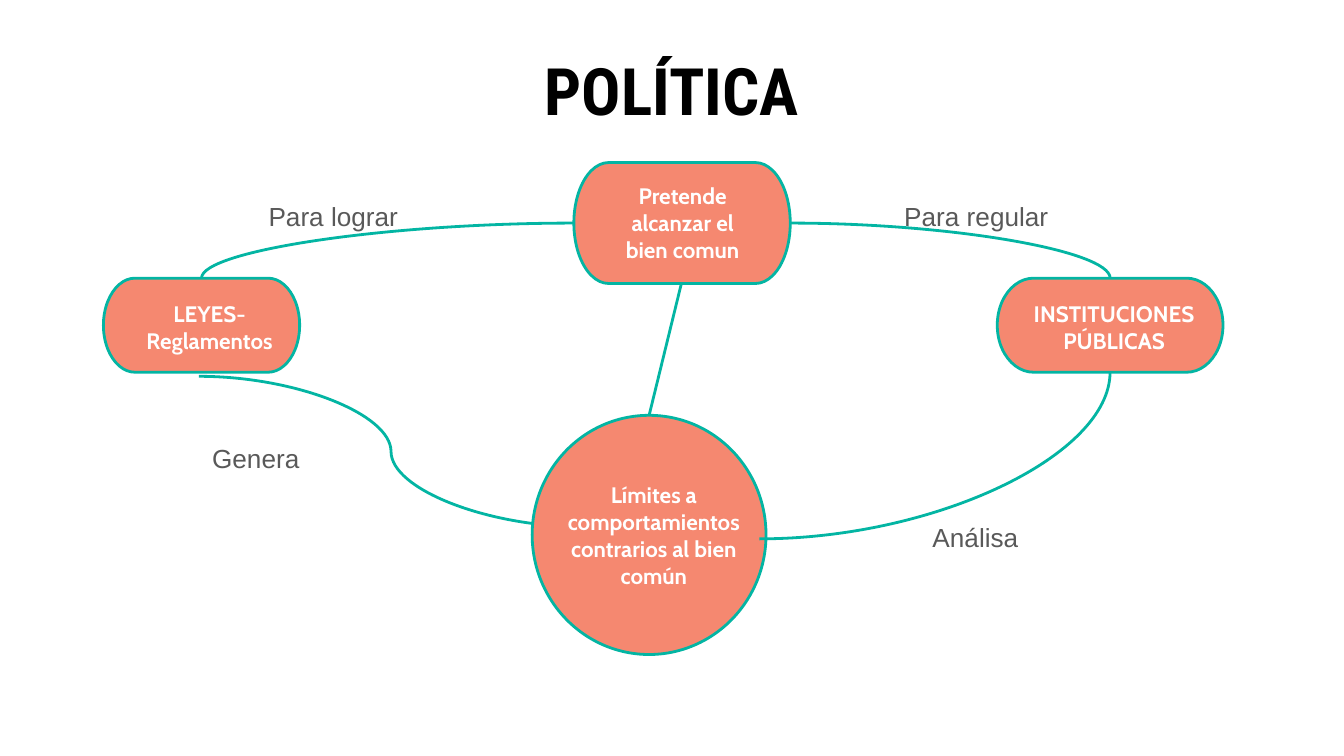
from typing import NamedTuple

from lxml import etree
from pptx import Presentation
from pptx.dml.color import RGBColor
from pptx.enum import shapes, text
from pptx.oxml import ns
from pptx.util import Inches, Pt

TEAL, CORAL, WHITE, BLACK, GRAY = "03B5A3", "F58870", "FFFFFF", "000000", "595959"
PILL = shapes.MSO_SHAPE.FLOWCHART_TERMINATOR
OVAL = shapes.MSO_SHAPE.OVAL
LINE = shapes.MSO_CONNECTOR.STRAIGHT
CURVE = shapes.MSO_CONNECTOR.CURVE


class Box(NamedTuple):
    x: float
    y: float
    w: float
    h: float


class Node(NamedTuple):
    kind: int
    box: Box
    area: Box
    words: str


class Link(NamedTuple):
    kind: int
    x1: float
    y1: float
    x2: float
    y2: float
    bend: bool = False  # a single quarter bend, level at its start


class Font(NamedTuple):
    name: str
    size: float
    color: str
    bold: bool


NODE = Font("Cabin", 12, WHITE, True)
HEAD = Font("Roboto Condensed", 35, BLACK, True)
NOTE = Font("Arial", 14, GRAY, False)

NODES = [
    Node(PILL, Box(4.27, 1.21, 1.61, 0.9), Box(4.46, 1.34, 1.24, 0.63),
         "Pretende alcanzar el bien comun"),
    Node(OVAL, Box(3.96, 3.09, 1.74, 1.78), Box(4.07, 3.55, 1.59, 0.86),
         "Límites a comportamientos contrarios al bien común"),
    Node(PILL, Box(7.42, 2.07, 1.68, 0.7), Box(7.52, 2.23, 1.54, 0.41),
         "INSTITUCIONES PÚBLICAS"),
    Node(PILL, Box(0.77, 2.07, 1.46, 0.7), Box(0.89, 2.23, 1.34, 0.41),
         "LEYES- Reglamentos"),
]
BACK = [
    Link(CURVE, 1.48, 2.8, 4.34, 3.92),
    Link(LINE, 4.83, 3.09, 5.07, 2.11),
]
FRONT = [
    Link(CURVE, 4.27, 1.66, 1.5, 2.07, True),
    Link(CURVE, 5.88, 1.66, 8.26, 2.07, True),
    Link(CURVE, 5.65, 4.01, 8.26, 2.77, True),
]
NOTES = [
    ("Para regular", 6.63, 1.39),
    ("Análisa", 6.84, 3.78),
    ("Genera", 1.48, 3.19),
    ("Para lograr", 1.9, 1.39),
]


def rgb(code: str) -> RGBColor:
    return RGBColor.from_string(code)


def stroke(item) -> None:
    item.line.color.rgb = rgb(TEAL)
    item.line.width = Pt(1.5)


def write(slide, box: Box, words: str, font: Font, mid: bool = True) -> None:
    frame = slide.shapes.add_textbox(*map(Inches, box)).text_frame
    frame.word_wrap = True
    frame.margin_left = frame.margin_right = Inches(0.1)
    frame.margin_top = frame.margin_bottom = Inches(0.1)
    frame.vertical_anchor = text.MSO_ANCHOR.MIDDLE if mid else text.MSO_ANCHOR.TOP
    frame.text = words
    para = frame.paragraphs[0]
    para.alignment = text.PP_ALIGN.CENTER if mid else text.PP_ALIGN.LEFT
    face = para.runs[0].font
    face.name, face.size, face.bold = font.name, Pt(font.size), font.bold
    face.color.rgb = rgb(font.color)


def join(slide, link: Link) -> None:
    ends = map(Inches, (link.x1, link.y1, link.x2, link.y2))
    line = slide.shapes.add_connector(link.kind, *ends)
    stroke(line)
    props = line._element.spPr
    etree.SubElement(props, ns.qn("a:effectLst"))
    if link.bend:
        props.find(ns.qn("a:prstGeom")).set("prst", "curvedConnector2")


def draw(slide, node: Node) -> None:
    shape = slide.shapes.add_shape(node.kind, *map(Inches, node.box))
    shape.shadow.inherit = False
    shape.fill.solid()
    shape.fill.fore_color.rgb = rgb(CORAL)
    stroke(shape)
    write(slide, node.area, node.words, NODE)


def main() -> None:
    # A 16:9 page
    deck = Presentation()
    deck.slide_width, deck.slide_height = Inches(10), Inches(10 * 9 / 16)
    slide = deck.slides.add_slide(deck.slide_layouts[6])

    # Links that run behind the nodes
    for link in BACK:
        join(slide, link)

    # Nodes with their wording
    for node in NODES:
        draw(slide, node)

    # Links on top of the nodes
    for link in FRONT:
        join(slide, link)

    # Title and link labels
    write(slide, Box(0.34, 0.37, 9.32, 0.59), "POLÍTICA", HEAD)
    for words, x, y in NOTES:
        write(slide, Box(x, y, 2.17, 0.41), words, NOTE, mid=False)

    deck.save("out.pptx")


if __name__ == "__main__":
    main()
